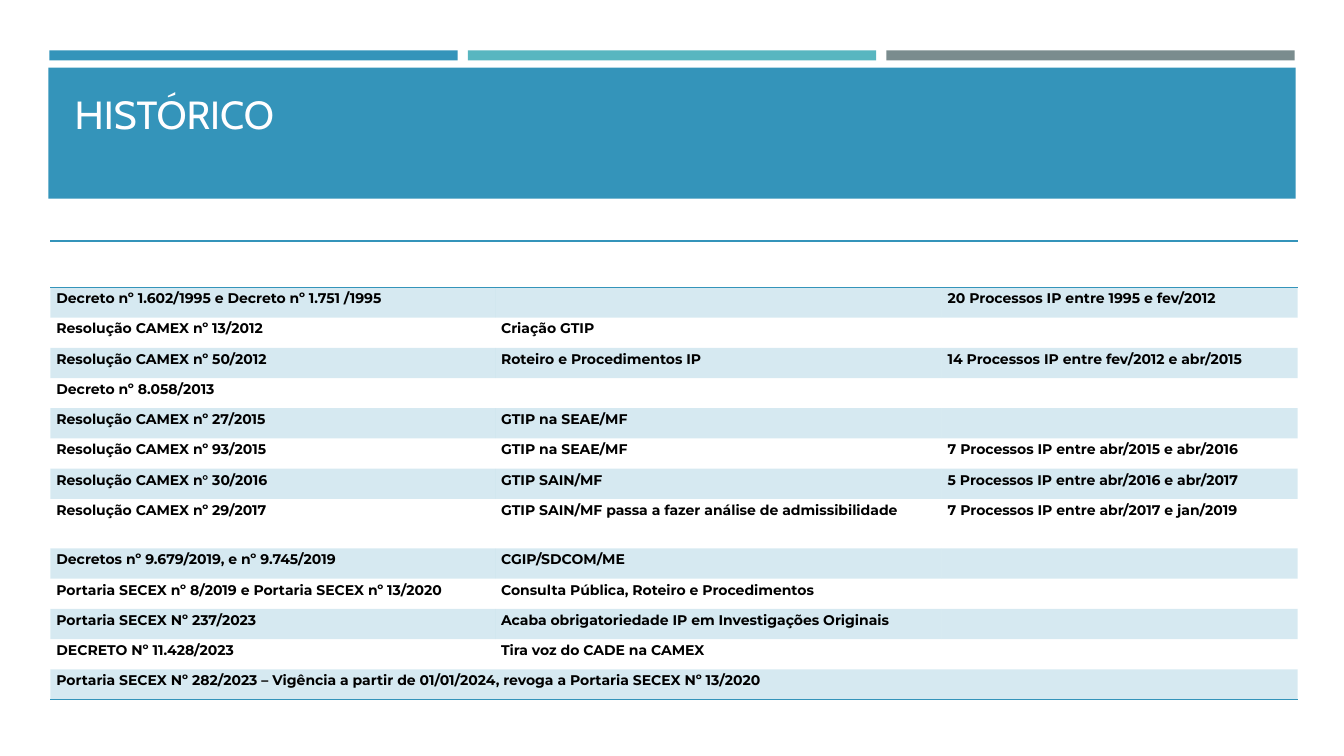
from lxml.etree import SubElement
from pptx import Presentation
from pptx.dml.color import RGBColor
from pptx.enum.shapes import MSO_SHAPE
from pptx.enum.text import MSO_ANCHOR, MSO_AUTO_SIZE, PP_ALIGN
from pptx.oxml.ns import qn
from pptx.util import Pt

SCALE = 9144
BLUE = RGBColor(0x34, 0x94, 0xBA)
TEAL = RGBColor(0x58, 0xB6, 0xC0)
GRAY = RGBColor(0x7A, 0x8C, 0x8E)
WHITE = RGBColor(0xFF, 0xFE, 0xFF)
BLACK = RGBColor(0, 0, 0)
PLAIN = "{2D5ABB26-0587-4C30-8999-92F81FD0307C}"

COLS = [441, 443, 353]
HEAD, ROW, TALL = 46, 30, 49
ACTS = [
    ("Decreto nº 1.602/1995 e Decreto nº 1.751 /1995", "",
     "20 Processos IP entre 1995 e fev/2012"),
    ("Resolução CAMEX nº 13/2012", "Criação GTIP", ""),
    ("Resolução CAMEX nº 50/2012", "Roteiro e Procedimentos IP",
     "14 Processos IP entre fev/2012 e abr/2015"),
    ("Decreto nº 8.058/2013", "", ""),
    ("Resolução CAMEX nº 27/2015", "GTIP na SEAE/MF", ""),
    ("Resolução CAMEX nº 93/2015", "GTIP na SEAE/MF",
     "7 Processos IP entre abr/2015 e abr/2016"),
    ("Resolução CAMEX n° 30/2016", "GTIP SAIN/MF",
     "5 Processos IP entre abr/2016 e abr/2017"),
    ("Resolução CAMEX nº 29/2017",
     "GTIP SAIN/MF passa a fazer análise de admissibilidade",
     "7 Processos IP entre abr/2017 e jan/2019"),
    ("Decretos nº 9.679/2019, e nº 9.745/2019", "CGIP/SDCOM/ME", ""),
    ("Portaria SECEX nº 8/2019 e Portaria SECEX nº 13/2020",
     "Consulta Pública, Roteiro e Procedimentos", ""),
    ("Portaria SECEX Nº 237/2023",
     "Acaba obrigatoriedade IP em Investigações Originais", ""),
    ("DECRETO Nº 11.428/2023", "Tira voz do CADE na CAMEX", ""),
    ("Portaria SECEX Nº 282/2023 – Vigência a partir de 01/01/2024, "
     "revoga a Portaria SECEX Nº 13/2020", "", ""),
]
LONG = 8


def px(num):
    """Turn px into EMU."""
    return num * SCALE


def write(frame, text, font="Montserrat", size=10, color=BLACK, bold=False):
    """Put formatted text in a frame, or just size an empty line."""
    para = frame.paragraphs[0]
    para.alignment = PP_ALIGN.LEFT
    if not text:
        para._p.get_or_add_endParaRPr().set("sz", str(size * 100))
        return
    run = para.add_run()
    run.text = text
    run.font.name = font
    run.font.size = Pt(size)
    run.font.bold = bold
    run.font.color.rgb = color


def bar(slide, left, top, width, height, color):
    """Draw a plain filled bar."""
    shape = slide.shapes.add_shape(
        MSO_SHAPE.RECTANGLE, px(left), px(top), px(width), px(height))
    shape.shadow.inherit = False
    shape.fill.solid()
    shape.fill.fore_color.rgb = color
    shape.line.fill.background()


def strip(slide, left, top, width, height, gap=10):
    """Draw three equal bars across the box."""
    part = (width - 2 * gap) // 3
    for num, color in enumerate((BLUE, TEAL, GRAY)):
        bar(slide, left + num * (part + gap), top, part, height, color)


def banner(slide, left, top, width, height):
    """Draw the title band and set the title on it."""
    bar(slide, left, top, width, height, BLUE)
    title = slide.shapes.title
    title.left, title.top = px(left + 16), px(top + 10)
    title.width, title.height = px(width - 31), px(height - 19)
    frame = title.text_frame
    frame.auto_size = MSO_AUTO_SIZE.NONE
    frame.vertical_anchor = MSO_ANCHOR.TOP
    frame.margin_top = px(13)
    write(frame, "HISTÓRICO", font="Cabin", size=28, color=WHITE)
    slide.shapes._spTree.append(title._element)


def edge(cell, *sides):
    """Rule the given sides of a cell in blue."""
    props = cell._tc.get_or_add_tcPr()
    for side in sides:
        line = SubElement(props, qn("a:" + side), w=str(Pt(1)))
        fill = SubElement(line, qn("a:solidFill"))
        SubElement(fill, qn("a:srgbClr"), val=str(BLUE))


def tint(cell):
    """Fill a cell with blue at one fifth strength."""
    cell.fill.solid()
    cell.fill.fore_color.rgb = BLUE
    color = cell._tc.tcPr.find(qn("a:solidFill")).find(qn("a:srgbClr"))
    SubElement(color, qn("a:alpha"), val="20000")


def history(slide, left, top):
    """Build the table of acts, with an empty head row."""
    rows = [("", "", "")] + ACTS
    last = len(rows) - 1
    sizes = [HEAD] + [ROW] * last
    sizes[LONG] = TALL
    frame = slide.shapes.add_table(
        len(rows), len(COLS), px(left), px(top), px(sum(COLS)), px(sum(sizes)))
    table = frame.table
    table.first_row = table.horz_banding = False
    table._tbl.tblPr.find(qn("a:tableStyleId")).text = PLAIN
    for col, width in zip(table.columns, COLS):
        col.width = px(width)
    for num, texts in enumerate(rows):
        table.rows[num].height = px(sizes[num])
        for cell, text in zip(table.rows[num].cells, texts):
            cell.margin_left = cell.margin_right = px(6)
            cell.margin_top = cell.margin_bottom = px(3)
            write(cell.text_frame, text, bold=True)
            if num == 0:
                edge(cell, "lnT", "lnB")
            if num == last:
                edge(cell, "lnB")
            if num % 2:
                tint(cell)
            else:
                cell.fill.background()
    for num in (0, last):
        table.cell(num, 0).merge(table.cell(num, len(COLS) - 1))


def main():
    """Build and save the slide."""
    deck = Presentation()
    deck.slide_width, deck.slide_height = px(1333), px(750)
    slide = deck.slides.add_slide(deck.slide_layouts[5])
    strip(slide, 49, 50, 1235, 10)
    banner(slide, 48, 67, 1237, 130)
    history(slide, 50, 239)
    deck.save("out.pptx")


if __name__ == "__main__":
    main()
